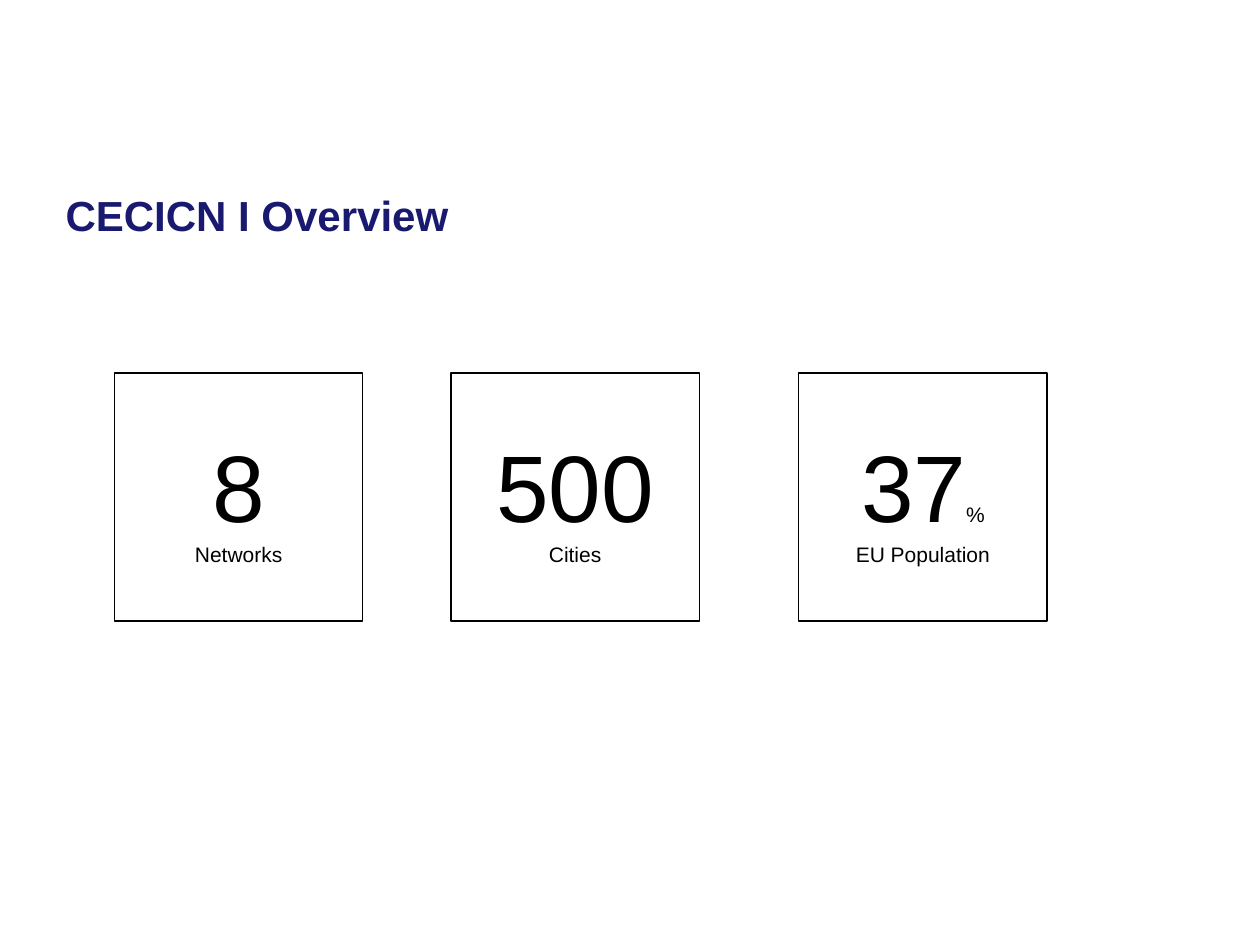
from pptx import Presentation
from pptx.dml.color import RGBColor
from pptx.enum.shapes import MSO_SHAPE as Shape
from pptx.enum.text import MSO_ANCHOR as Anchor, PP_ALIGN as Align
from pptx.util import Inches, Pt

# Content: left edge of each card, then its lines of (text, size) runs
TITLE = "CECICN I Overview"
BIG, SMALL = 54, 12
CARDS = [
    (0.91, [[("8", BIG)], [("Networks", SMALL)]]),
    (3.58, [[("500", BIG)], [("Cities", SMALL)]]),
    (6.34, [[("37", BIG), ("%", SMALL)], [("EU Population", SMALL)]]),
]
CARD_TOP, CARD_SIDE = 2.96, 1.97

FONT = "Arial"
NAVY = RGBColor(0x19, 0x19, 0x70)
BLACK = RGBColor(0, 0, 0)


def add_span(para, text, size, color, bold=False):
    span = para.add_run()
    span.text = text
    span.font.name = FONT
    span.font.size = Pt(size)
    span.font.bold = bold
    span.font.color.rgb = color


def add_card(page, left, lines):
    box = page.shapes.add_shape(
        Shape.RECTANGLE, Inches(left), Inches(CARD_TOP),
        Inches(CARD_SIDE), Inches(CARD_SIDE))
    box.shadow.inherit = False
    box.fill.background()
    box.line.color.rgb = BLACK
    box.line.width = Pt(0.75)
    frame = box.text_frame
    frame.word_wrap = True
    frame.vertical_anchor = Anchor.MIDDLE
    for index, spans in enumerate(lines):
        para = frame.add_paragraph() if index else frame.paragraphs[0]
        para.alignment = Align.CENTER
        for text, size in spans:
            add_span(para, text, size, BLACK)


def main():
    deck = Presentation()
    deck.slide_width, deck.slide_height = Inches(10), Inches(7.5)
    page = deck.slides.add_slide(deck.slide_layouts[5])

    # Title
    title = page.shapes.title
    title.left, title.top = Inches(0.42), Inches(1.08)
    title.width, title.height = Inches(6.67), Inches(1.25)
    title.text_frame.vertical_anchor = Anchor.MIDDLE
    heading = title.text_frame.paragraphs[0]
    heading.alignment = Align.LEFT
    add_span(heading, TITLE, 24, NAVY, bold=True)

    # Key figures
    for left, lines in CARDS:
        add_card(page, left, lines)

    deck.save("out.pptx")


if __name__ == "__main__":
    main()
